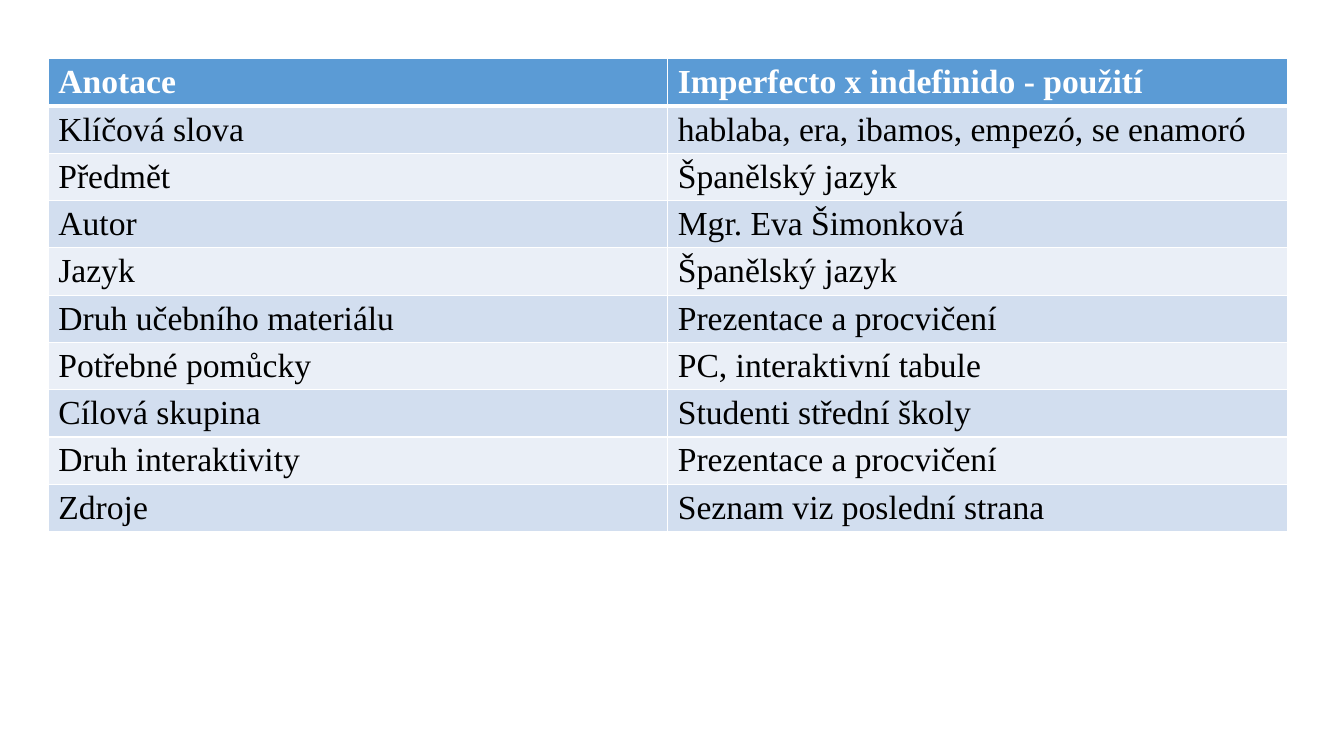
from typing import NamedTuple

from lxml import etree
from pptx import Presentation
from pptx.dml.color import RGBColor
from pptx.oxml.ns import qn
from pptx.table import Table, _Cell
from pptx.util import Emu, Pt

EMU_PER_PX = 9525
SLIDE_WIDTH, SLIDE_HEIGHT = 1280, 720
TABLE_LEFT, TABLE_TOP = 46, 56
COLUMN_WIDTH, ROW_HEIGHT = 590, 45
BLANK_LAYOUT = 6

FONT_NAME = "Times New Roman"
FONT_SIZE = Pt(24)
THIN_BORDER, HEADER_BORDER = Pt(1), Pt(3)

WHITE = RGBColor(0xFF, 0xFF, 0xFF)
BLACK = RGBColor(0x00, 0x00, 0x00)
HEADER_BLUE = RGBColor(0x5B, 0x9B, 0xD5)
BAND_DARK = RGBColor(0xD2, 0xDE, 0xEF)
BAND_LIGHT = RGBColor(0xEA, 0xEF, 0xF7)


class Entry(NamedTuple):
    label: str
    value: str


ENTRIES = [
    Entry("Anotace", "Imperfecto x indefinido - použití"),
    Entry("Klíčová slova", "hablaba, era, ibamos, empezó, se enamoró"),
    Entry("Předmět", "Španělský jazyk"),
    Entry("Autor", "Mgr. Eva Šimonková"),
    Entry("Jazyk", "Španělský jazyk"),
    Entry("Druh učebního materiálu", "Prezentace a procvičení"),
    Entry("Potřebné pomůcky", "PC, interaktivní tabule"),
    Entry("Cílová skupina", "Studenti střední školy"),
    Entry("Druh interaktivity", "Prezentace a procvičení"),
    Entry("Zdroje", "Seznam viz poslední strana"),
]


def px(length: int) -> Emu:
    return Emu(length * EMU_PER_PX)


def set_borders(cell: _Cell, top: Pt, bottom: Pt) -> None:
    """Draw white borders; call before the fill, which must follow them in the XML."""
    properties = cell._tc.get_or_add_tcPr()
    widths = {"a:lnL": THIN_BORDER, "a:lnR": THIN_BORDER, "a:lnT": top, "a:lnB": bottom}
    for tag, width in widths.items():
        border = etree.SubElement(properties, qn(tag), w=str(int(width)))
        fill = etree.SubElement(border, qn("a:solidFill"))
        etree.SubElement(fill, qn("a:srgbClr"), val=str(WHITE))


def fill_row(table: Table, row: int, entry: Entry) -> None:
    is_header = row == 0
    band = BAND_DARK if row % 2 else BAND_LIGHT
    for column, text in enumerate(entry):
        cell = table.cell(row, column)
        set_borders(
            cell,
            top=HEADER_BORDER if row == 1 else THIN_BORDER,
            bottom=HEADER_BORDER if is_header else THIN_BORDER,
        )
        cell.fill.solid()
        cell.fill.fore_color.rgb = HEADER_BLUE if is_header else band
        cell.text_frame.text = text
        font = cell.text_frame.paragraphs[0].runs[0].font
        font.name = FONT_NAME
        font.size = FONT_SIZE
        font.bold = is_header
        font.color.rgb = WHITE if is_header else BLACK


def main() -> None:
    presentation = Presentation()
    presentation.slide_width = px(SLIDE_WIDTH)
    presentation.slide_height = px(SLIDE_HEIGHT)
    slide = presentation.slides.add_slide(presentation.slide_layouts[BLANK_LAYOUT])

    column_count = len(Entry._fields)
    annotation = slide.shapes.add_table(
        len(ENTRIES),
        column_count,
        px(TABLE_LEFT),
        px(TABLE_TOP),
        px(COLUMN_WIDTH * column_count),
        px(ROW_HEIGHT * len(ENTRIES)),
    ).table
    for row, entry in enumerate(ENTRIES):
        fill_row(annotation, row, entry)

    presentation.save("out.pptx")


if __name__ == "__main__":
    main()
